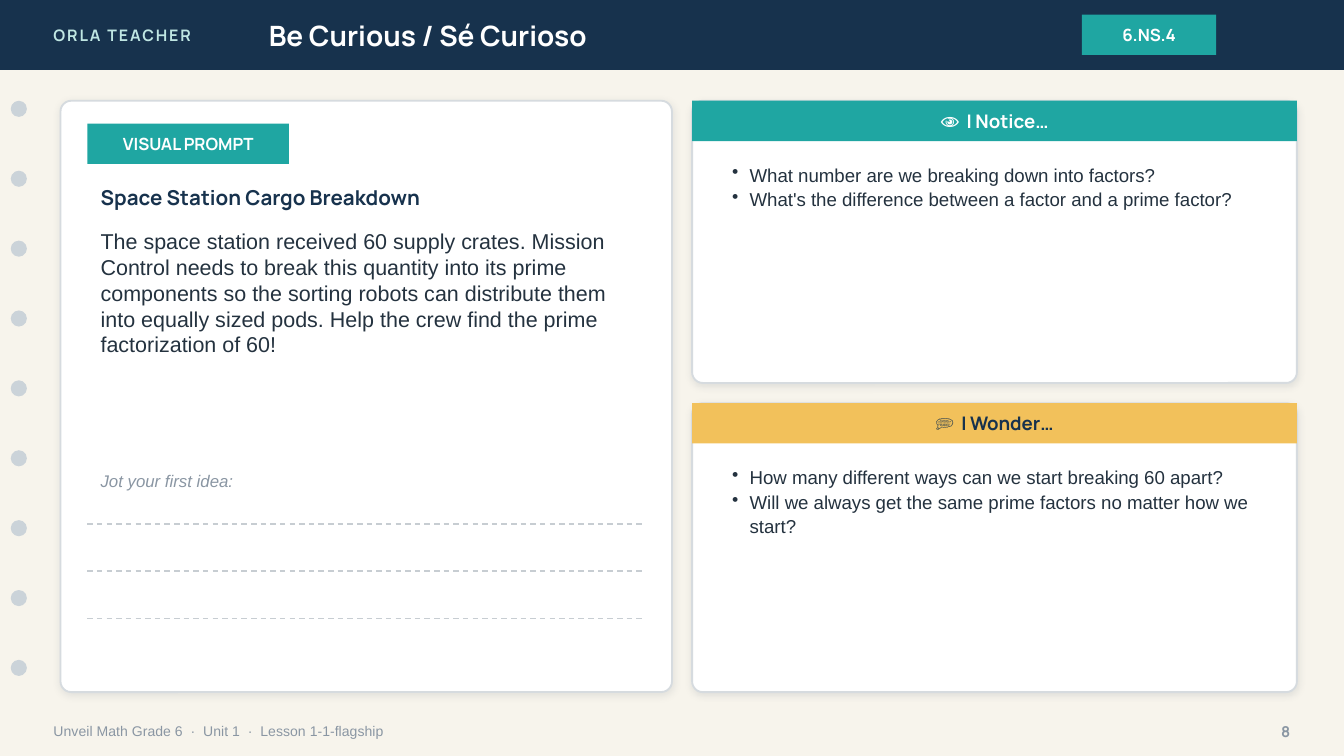
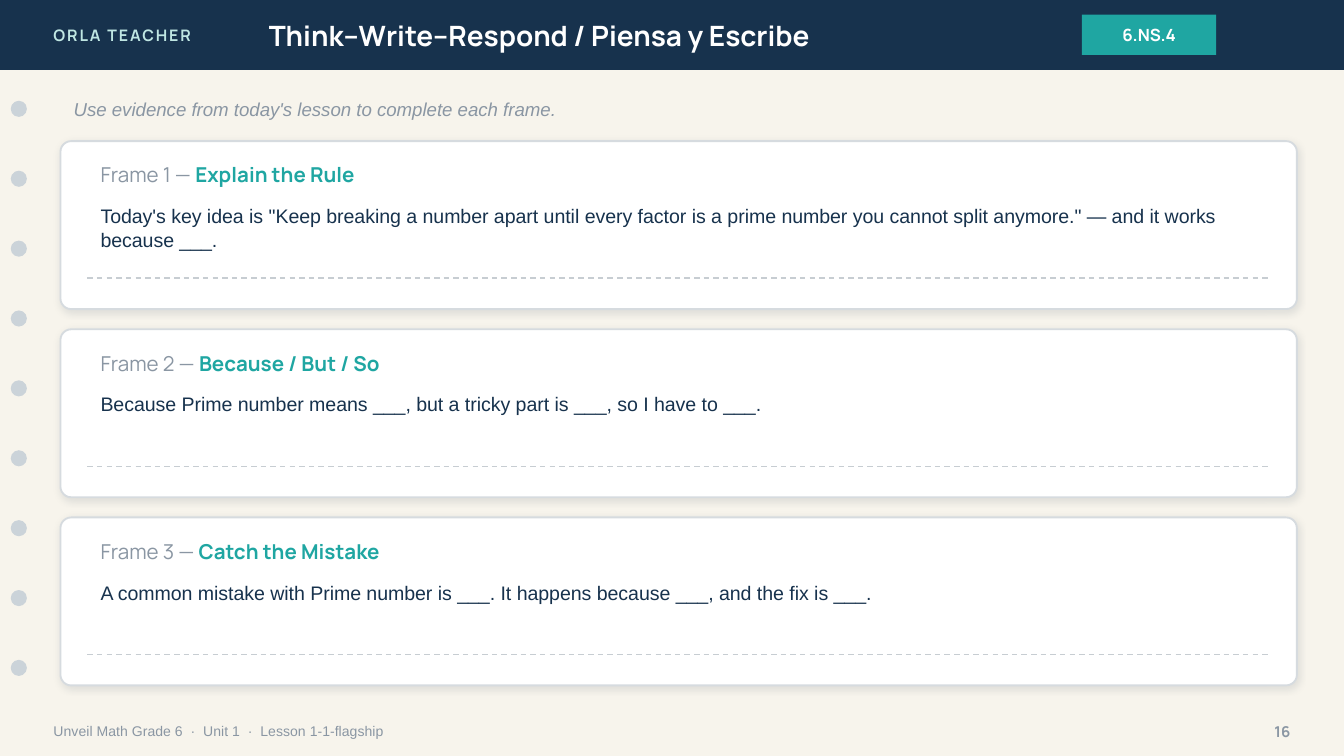
from dataclasses import dataclass
from typing import NamedTuple

from lxml import etree
from pptx import Presentation
from pptx.dml.color import RGBColor
from pptx.enum.dml import MSO_LINE
from pptx.enum.shapes import MSO_CONNECTOR, MSO_SHAPE
from pptx.enum.text import MSO_ANCHOR, MSO_AUTO_SIZE, PP_ALIGN
from pptx.oxml.ns import qn
from pptx.shapes.autoshape import Shape
from pptx.slide import Slide
from pptx.text.text import TextFrame
from pptx.util import Inches, Pt

CREAM = RGBColor(0xF7, 0xF4, 0xEC)
NAVY = RGBColor(0x17, 0x32, 0x4D)
MINT = RGBColor(0xBF, 0xE6, 0xE2)
WHITE = RGBColor(0xFF, 0xFF, 0xFF)
TEAL = RGBColor(0x1F, 0xA6, 0xA2)
GOLD = RGBColor(0xF2, 0xC1, 0x5B)
INK = RGBColor(0x24, 0x32, 0x3F)
SLATE = RGBColor(0x8A, 0x96, 0xA3)
HOLE_GRAY = RGBColor(0xCB, 0xD3, 0xD9)
BORDER = RGBColor(0xD6, 0xDB, 0xDF)
RULE_GRAY = RGBColor(0xC7, 0xCD, 0xD2)
SHADOW = RGBColor(0x1C, 0x2E, 0x42)

RECTANGLE = MSO_SHAPE.RECTANGLE
ROUNDED = MSO_SHAPE.ROUNDED_RECTANGLE
OVAL = MSO_SHAPE.OVAL
STRAIGHT = MSO_CONNECTOR.STRAIGHT
DASH = MSO_LINE.DASH
TOP = MSO_ANCHOR.TOP
MIDDLE = MSO_ANCHOR.MIDDLE
NO_AUTOFIT = MSO_AUTO_SIZE.NONE
LEFT = PP_ALIGN.LEFT
CENTER = PP_ALIGN.CENTER
RIGHT = PP_ALIGN.RIGHT

HEADING_FONT = "Manrope"
BODY_FONT = "Arial"
TITLE_ONLY = 5
CORNER_RADIUS = 0.08
MARGIN = 0.45
CARD_PADDING = 0.2
CONTENT_WIDTH = 9.2
BULLET_INDENT = 0.13


class Area(NamedTuple):
    left: float
    top: float
    width: float
    height: float

    def lengths(self) -> list[int]:
        return [Inches(value) for value in self]


@dataclass(frozen=True)
class Style:
    size: float
    color: RGBColor
    face: str = BODY_FONT
    bold: bool = False
    italic: bool = False
    align: PP_ALIGN = LEFT
    anchor: MSO_ANCHOR = MIDDLE
    line_spacing: float | None = None
    tracking: float = 0
    bullet: bool = False


@dataclass(frozen=True)
class Panel:
    top: float
    height: float
    heading: str
    fill: RGBColor
    color: RGBColor
    questions: list[str]


class Frame(NamedTuple):
    name: str
    starter: str


BRAND = Style(8.5, MINT, HEADING_FONT, bold=True, tracking=1)
TITLE = Style(15, WHITE, HEADING_FONT, bold=True)
TAG = Style(9, WHITE, HEADING_FONT, bold=True, align=CENTER)
FOOTER = Style(7.5, SLATE)
PAGE_NUMBER = Style(8, SLATE, HEADING_FONT, bold=True, align=RIGHT)
PROMPT_TITLE = Style(11, NAVY, HEADING_FONT, bold=True)
PROMPT = Style(11.5, INK, anchor=TOP)
JOT = Style(9, SLATE, italic=True)
QUESTION = Style(10, INK, anchor=TOP, line_spacing=1.1, bullet=True)
DIRECTIONS = Style(10, SLATE, italic=True)
FRAME_LABEL = Style(11, SLATE, HEADING_FONT)
STARTER = Style(10.5, NAVY, anchor=TOP)

PANELS = [
    Panel(0.75, 2.1, "👁  I Notice…", TEAL, WHITE, [
        "What number are we breaking down into factors?",
        "What's the difference between a factor and a prime factor?",
    ]),
    Panel(3, 2.15, "💭  I Wonder…", GOLD, NAVY, [
        "How many different ways can we start breaking 60 apart?",
        "Will we always get the same prime factors no matter how we start?",
    ]),
]

FRAMES = [
    Frame("Explain the Rule",
          "Today's key idea is \"Keep breaking a number apart until every factor "
          "is a prime number you cannot split anymore.\" — and it works because ___."),
    Frame("Because / But / So",
          "Because Prime number means ___, but a tricky part is ___, "
          "so I have to ___."),
    Frame("Catch the Mistake",
          "A common mistake with Prime number is ___. It happens because ___, "
          "and the fix is ___."),
]


def write(text_frame: TextFrame, lines: list[str], style: Style) -> None:
    text_frame.word_wrap = True
    text_frame.auto_size = NO_AUTOFIT
    text_frame.vertical_anchor = style.anchor
    for index, line in enumerate(lines):
        para = text_frame.add_paragraph() if index else text_frame.paragraphs[0]
        para.alignment = style.align
        if style.line_spacing:
            para.line_spacing = style.line_spacing
        if style.bullet:
            properties = para._p.get_or_add_pPr()
            properties.set("marL", str(Inches(BULLET_INDENT)))
            properties.set("indent", str(-Inches(BULLET_INDENT)))
            etree.SubElement(properties, qn("a:buChar"), char="•")
        font = para.font
        font.name = style.face
        font.size = Pt(style.size)
        font.bold = style.bold
        font.italic = style.italic
        font.color.rgb = style.color
        span = para.add_run()
        span.text = line
        if style.tracking:
            span._r.get_or_add_rPr().set("spc", str(int(style.tracking * 100)))


def add_text(page: Slide, area: Area, text: str | list[str], style: Style) -> Shape:
    box = page.shapes.add_textbox(*area.lengths())
    write(box.text_frame, [text] if isinstance(text, str) else text, style)
    return box


def add_block(page: Slide, kind: MSO_SHAPE, area: Area, fill: RGBColor) -> Shape:
    block = page.shapes.add_shape(kind, *area.lengths())
    block.shadow.inherit = False
    block.fill.solid()
    block.fill.fore_color.rgb = fill
    block.line.fill.background()
    return block


def add_label(page: Slide, area: Area, text: str, fill: RGBColor, style: Style) -> None:
    write(add_block(page, RECTANGLE, area, fill).text_frame, [text], style)


def add_card(page: Slide, area: Area) -> None:
    card = add_block(page, ROUNDED, area, WHITE)
    card.adjustments[0] = CORNER_RADIUS / min(area.width, area.height)
    card.line.color.rgb = BORDER
    card.line.width = Pt(1)
    effects = card._element.spPr.find(qn("a:effectLst"))
    shadow = etree.SubElement(effects, qn("a:outerShdw"), blurRad=str(Pt(4)),
                              dist=str(Pt(1)), dir="5400000", rotWithShape="0")
    color = etree.SubElement(shadow, qn("a:srgbClr"), val=str(SHADOW))
    etree.SubElement(color, qn("a:alpha"), val="10000")


def add_writing_line(page: Slide, left: float, top: float, width: float) -> None:
    rule = page.shapes.add_connector(STRAIGHT, Inches(left), Inches(top),
                                     Inches(left + width), Inches(top))
    rule.line.color.rgb = RULE_GRAY
    rule.line.width = Pt(0.75)
    rule.line.dash_style = DASH
    etree.SubElement(rule._element.spPr, qn("a:effectLst"))


def add_page(deck: Presentation, title: str, number: int) -> Slide:
    page = deck.slides.add_slide(deck.slide_layouts[TITLE_ONLY])
    page.background.fill.solid()
    page.background.fill.fore_color.rgb = CREAM
    add_block(page, RECTANGLE, Area(0, 0, 10, 0.52), NAVY)
    add_text(page, Area(0.3, 0, 2.4, 0.52), "ORLA TEACHER", BRAND)
    heading = page.shapes.title
    heading.left, heading.top, heading.width, heading.height = Area(1.9, 0, 5.6, 0.52).lengths()
    write(heading.text_frame, [title], TITLE)
    heading.element.getparent().append(heading.element)
    add_label(page, Area(8.05, 0.11, 1, 0.3), "6.NS.4", TEAL, TAG)
    for hole in range(9):
        add_block(page, OVAL, Area(0.08, 0.75 + 0.52 * hole, 0.12, 0.12), HOLE_GRAY)
    add_text(page, Area(0.3, 5.3, 7, 0.28),
             "Unveil Math Grade 6  ·  Unit 1  ·  Lesson 1-1-flagship", FOOTER)
    add_text(page, Area(9.2, 5.3, 0.5, 0.28), str(number), PAGE_NUMBER)
    return page


def add_panel(page: Slide, panel: Panel) -> None:
    left, width = 5.15, 4.5
    add_card(page, Area(left, panel.top, width, panel.height))
    add_label(page, Area(left, panel.top, width, 0.3), panel.heading, panel.fill,
              Style(10, panel.color, HEADING_FONT, bold=True, align=CENTER))
    add_text(page, Area(left + CARD_PADDING, panel.top + 0.4,
                        width - 2 * CARD_PADDING, panel.height - 0.5),
             panel.questions, QUESTION)


def add_frame(page: Slide, number: int, frame: Frame) -> None:
    top = 1.05 + 1.4 * (number - 1)
    left = MARGIN + CARD_PADDING
    width = CONTENT_WIDTH - 2 * CARD_PADDING
    add_card(page, Area(MARGIN, top, CONTENT_WIDTH, 1.25))
    label = add_text(page, Area(left, top + 0.1, width, 0.3),
                     f"Frame {number} — ", FRAME_LABEL)
    name = label.text_frame.paragraphs[0].add_run()
    name.text = frame.name
    name.font.bold = True
    name.font.color.rgb = TEAL
    add_text(page, Area(left, top + 0.42, width, 0.4), frame.starter, STARTER)
    add_writing_line(page, left, top + 1.02, width)


def build_curious(deck: Presentation) -> None:
    page = add_page(deck, "Be Curious / Sé Curioso", 8)
    left, width = MARGIN + CARD_PADDING, 4.15
    add_card(page, Area(MARGIN, 0.75, 4.55, 4.4))
    add_label(page, Area(left, 0.92, 1.5, 0.3), "VISUAL PROMPT", TEAL, TAG)
    add_text(page, Area(left, 1.32, width, 0.3),
             "Space Station Cargo Breakdown", PROMPT_TITLE)
    add_text(page, Area(left, 1.65, width, 1.7),
             "The space station received 60 supply crates. Mission Control needs "
             "to break this quantity into its prime components so the sorting "
             "robots can distribute them into equally sized pods. Help the crew "
             "find the prime factorization of 60!", PROMPT)
    add_text(page, Area(left, 3.45, 4, 0.25), "Jot your first idea:", JOT)
    for row in range(3):
        add_writing_line(page, left, 3.9 + 0.35 * row, width)
    for panel in PANELS:
        add_panel(page, panel)


def build_respond(deck: Presentation) -> None:
    page = add_page(deck, "Think–Write–Respond / Piensa y Escribe", 16)
    add_text(page, Area(MARGIN, 0.66, CONTENT_WIDTH, 0.3),
             "Use evidence from today's lesson to complete each frame.", DIRECTIONS)
    for number, frame in enumerate(FRAMES, start=1):
        add_frame(page, number, frame)


def main() -> None:
    deck = Presentation()
    deck.slide_width = Inches(10)
    deck.slide_height = Inches(10 * 9 / 16)
    build_curious(deck)
    build_respond(deck)
    deck.save("out.pptx")


if __name__ == "__main__":
    main()
